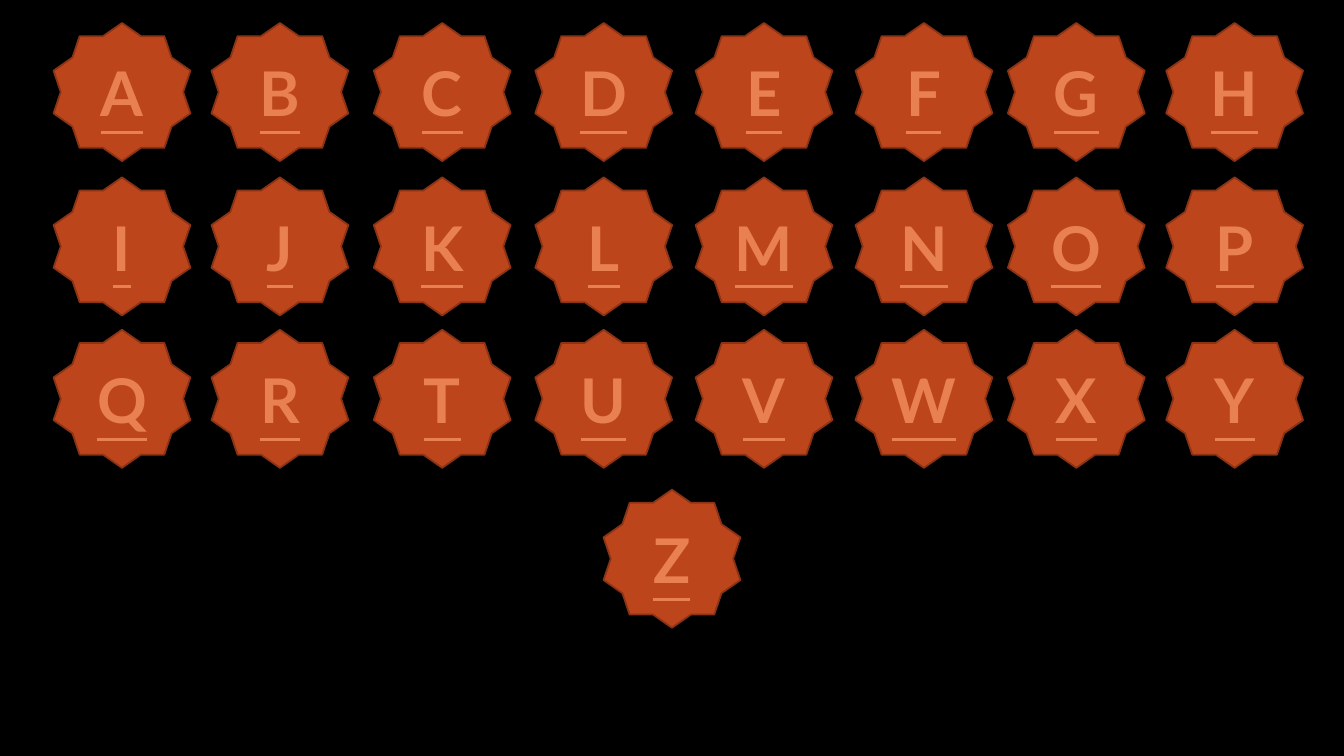
from pptx import Presentation
from pptx.dml.color import RGBColor
from pptx.enum.shapes import MSO_SHAPE
from pptx.enum.text import MSO_ANCHOR, PP_ALIGN
from pptx.util import Cm, Pt

COLORS = {
    "background": "000000",
    "badge": "BC451B",
    "outline": "8B3314",
    "letter": "E98052",
}
LETTER_FORMAT = {"name": "Lato", "size": Pt(44), "bold": True, "underline": True}

# Badge grid, in centimetres
BADGE_WIDTH, BADGE_HEIGHT = 3.45, 3.48
COLUMNS = [1.35, 5.33, 9.42, 13.49, 17.53, 21.56, 25.4, 29.39]
CENTER_COLUMN = [15.21]
ROWS = [
    (0.58, "ABCDEFGH", COLUMNS),
    (4.47, "IJKLMNOP", COLUMNS),
    (8.31, "QRTUVWXY", COLUMNS),
    (12.34, "Z", CENTER_COLUMN),
]

# Slide and background
presentation = Presentation()
presentation.slide_width = Cm(33.87)
presentation.slide_height = Cm(19.05)
slide = presentation.slides.add_slide(presentation.slide_layouts[6])
slide.background.fill.solid()
slide.background.fill.fore_color.rgb = RGBColor.from_string(COLORS["background"])

# Letter badges
for top, letters, columns in ROWS:
    for letter, left in zip(letters, columns):
        shape = slide.shapes.add_shape(
            MSO_SHAPE.STAR_10_POINT,
            Cm(left), Cm(top), Cm(BADGE_WIDTH), Cm(BADGE_HEIGHT),
        )
        shape.shadow.inherit = False
        shape.fill.solid()
        shape.fill.fore_color.rgb = RGBColor.from_string(COLORS["badge"])
        shape.line.color.rgb = RGBColor.from_string(COLORS["outline"])
        shape.line.width = Pt(1.25)

        shape.text_frame.vertical_anchor = MSO_ANCHOR.MIDDLE
        paragraph = shape.text_frame.paragraphs[0]
        paragraph.alignment = PP_ALIGN.CENTER
        run = paragraph.add_run()
        run.text = letter
        for attribute, value in LETTER_FORMAT.items():
            setattr(run.font, attribute, value)
        run.font.color.rgb = RGBColor.from_string(COLORS["letter"])

presentation.save("out.pptx")
